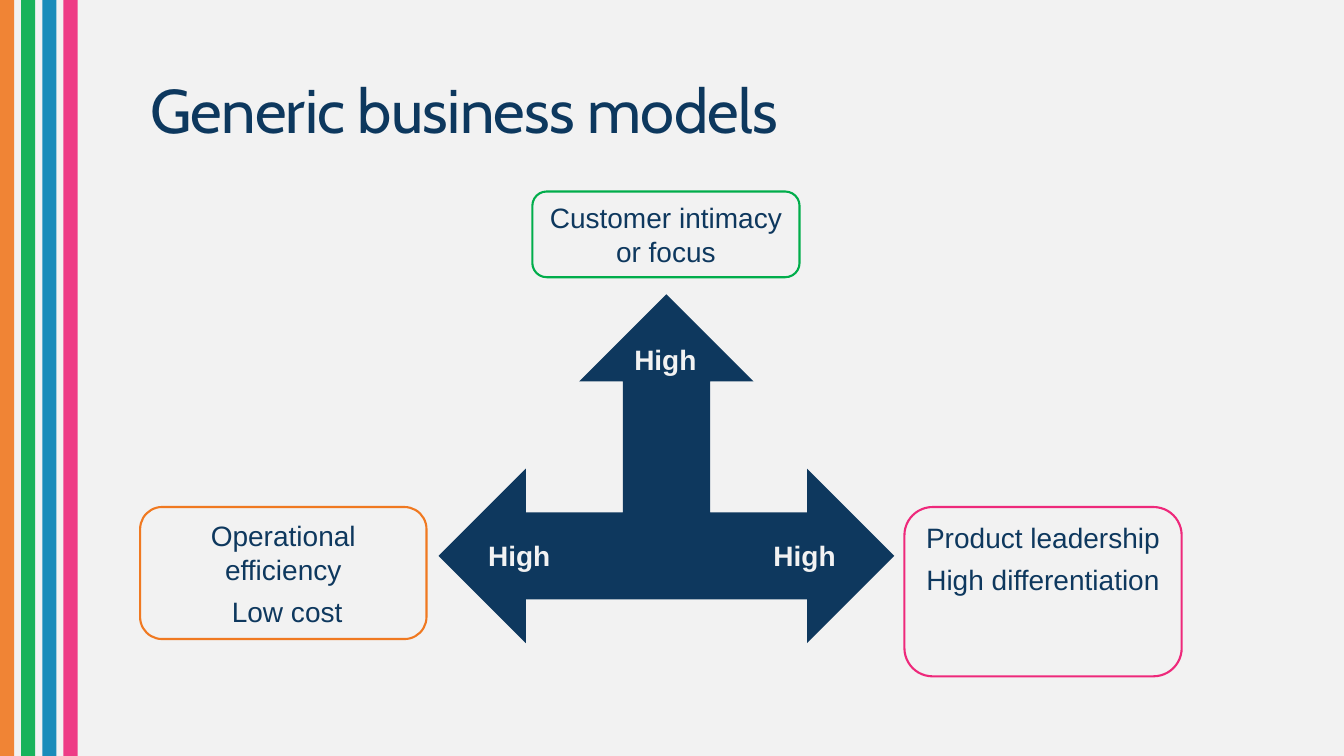
from lxml import etree
from pptx import Presentation
from pptx.dml.color import RGBColor
from pptx.enum.shapes import MSO_SHAPE as Shape
from pptx.enum.text import MSO_ANCHOR as Anchor, PP_ALIGN as Align
from pptx.oxml.ns import qn
from pptx.util import Inches, Pt

PAPER, NAVY = "F2F2F2", "0E385E"
ORANGE, GREEN, BLUE, PINK = "F07921", "01AD4B", "0281B4", "EE297B"
LABEL = {"size": Pt(20), "name": "Arial"}


def color(hex_value):
    return RGBColor.from_string(hex_value)


def add_shape(page, kind, place, fill=None, line=None):
    shape = page.shapes.add_shape(kind, *map(Inches, place))
    shape.shadow.inherit = False
    if fill:
        shape.fill.solid()
        shape.fill.fore_color.rgb = color(fill)
    else:
        shape.fill.background()
    if line:
        shape.line.color.rgb = color(line)
        shape.line.width = Pt(1.5)
    else:
        shape.line.fill.background()
    return shape


def write(box, lines, font, ink, align=Align.CENTER, anchor=Anchor.TOP, gap=6):
    frame = box.text_frame
    frame.word_wrap = True
    frame.vertical_anchor = anchor
    for index, line in enumerate(lines):
        para = frame.paragraphs[0] if index == 0 else frame.add_paragraph()
        para.alignment = align
        para.space_after = Pt(gap)
        span = para.add_run()
        span.text = line
        for key, value in font.items():
            setattr(span.font, key, value)
        span.font.color.rgb = color(ink)
    return frame


def add_stripe(page, left, fill):
    stripe = add_shape(page, Shape.RECTANGLE, (left, 0, 0.14, 7.5), fill)
    tint = stripe.fill._xPr.find(qn("a:solidFill"))[0]
    etree.SubElement(tint, qn("a:alpha"), val="90000")


def add_card(page, place, line, lines):
    card = add_shape(page, Shape.ROUNDED_RECTANGLE, place, line=line)
    write(card, lines, LABEL, NAVY)


def add_text(page, place, text, font, ink, **layout):
    box = page.shapes.add_textbox(*map(Inches, place))
    return write(box, [text], font, ink, **layout)


def add_title(page, text):
    frame = add_text(page, (1.39, 0.4, 8.76, 1.45), text,
                     {"size": Pt(44), "name": "Cabin"}, "0D385E",
                     align=Align.LEFT, anchor=Anchor.MIDDLE, gap=0)
    para = frame.paragraphs[0]
    para.line_spacing = 0.9
    # Slightly tightened letters
    para.runs[0].font._element.set("spc", "-50")


def main():
    deck = Presentation()
    deck.slide_width, deck.slide_height = Inches(13.33), Inches(7.5)
    page = deck.slides.add_slide(deck.slide_layouts[6])
    page.background.fill.solid()
    page.background.fill.fore_color.rgb = color(PAPER)

    # Stripes down the left edge
    for index, fill in enumerate((ORANGE, GREEN, BLUE, PINK)):
        add_stripe(page, index * 0.21, fill)

    add_title(page, "Generic business models")

    # Three-way arrow
    arrow = add_shape(page, Shape.LEFT_RIGHT_UP_ARROW, (4.35, 2.92, 4.52, 3.46), NAVY)
    for index in range(3):
        arrow.adjustments[index] = 0.25

    # Business models at the arrow tips
    add_card(page, (8.97, 5.03, 2.75, 1.68), PINK,
             ["Product leadership", "High differentiation"])
    add_card(page, (1.39, 5.03, 2.84, 1.31), ORANGE,
             ["Operational efficiency", " Low cost"])
    add_card(page, (5.28, 1.9, 2.65, 0.85), GREEN, ["Customer intimacy or focus"])

    # Labels in the arrowheads
    for left, top, width in ((6.13, 3.35, 0.94), (4.68, 5.29, 0.94), (7.47, 5.29, 1.02)):
        add_text(page, (left, top, width, 0.43), "High",
                 {**LABEL, "bold": True}, PAPER, gap=0)

    deck.save("out.pptx")


if __name__ == "__main__":
    main()
